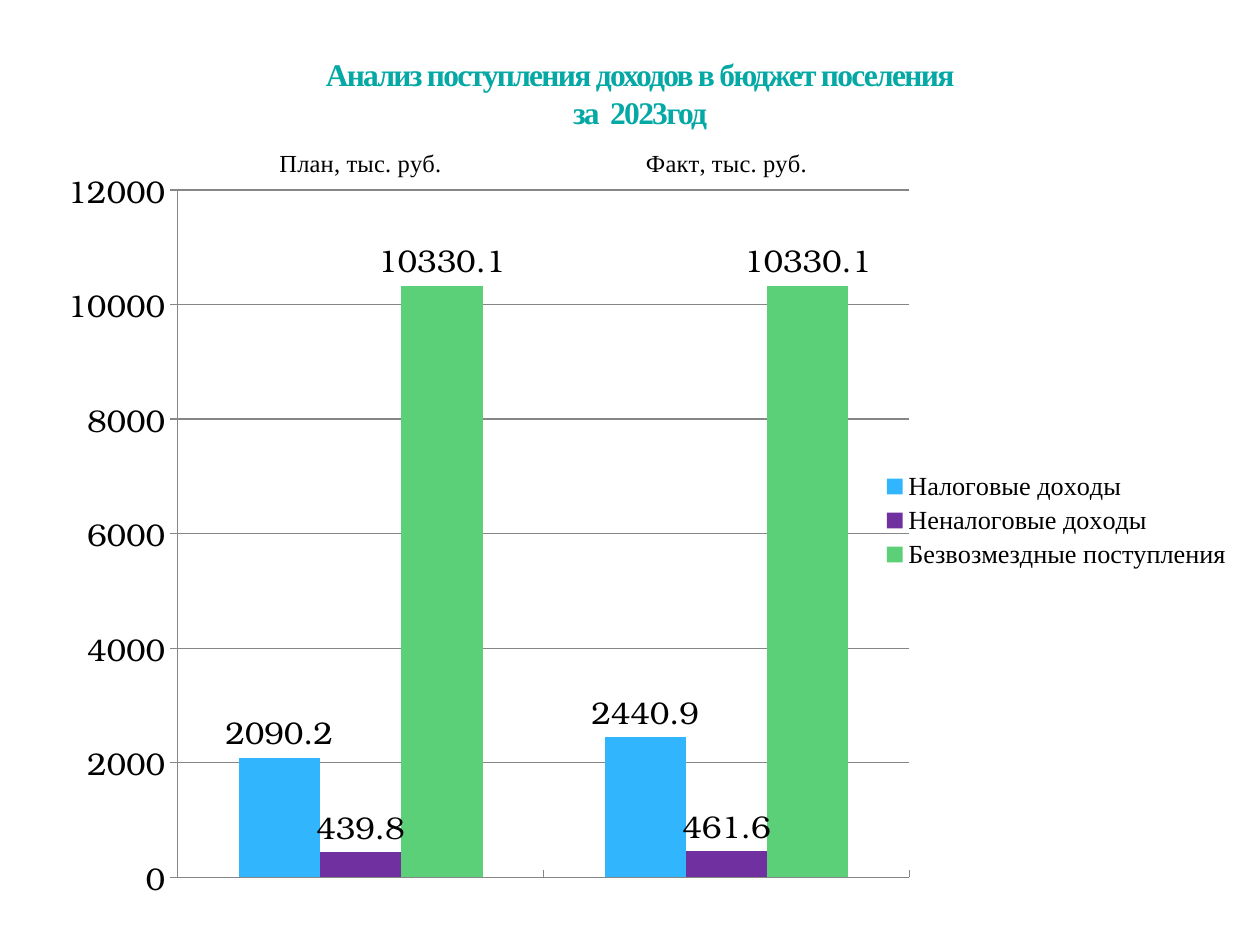
from lxml import etree
from pptx import Presentation
from pptx.chart.data import CategoryChartData
from pptx.dml.color import RGBColor
from pptx.enum.chart import XL_CHART_TYPE as ChartType
from pptx.enum.chart import XL_LABEL_POSITION as LabelPosition
from pptx.enum.chart import XL_LEGEND_POSITION as LegendPosition
from pptx.enum.chart import XL_TICK_LABEL_POSITION as TickLabels
from pptx.enum.chart import XL_TICK_MARK as TickMark
from pptx.enum.text import MSO_ANCHOR as Anchor
from pptx.enum.text import MSO_AUTO_SIZE as AutoSize
from pptx.enum.text import PP_ALIGN as Align
from pptx.oxml.ns import qn
from pptx.util import Inches, Pt


def color(value):
    return RGBColor.from_string(value)


class IncomePage:
    """Hold the style and the current slide of the income report."""

    text_font = "Times New Roman"
    number_font = "TeX Gyre Bonum"
    black = "000000"
    grid = "868686"
    teal = "04A8A4"

    def __init__(self, deck):
        self.page = deck.slides.add_slide(deck.slide_layouts[5])

    def format_font(self, font, name, size, shade=black):
        font.name = name
        font.size = Pt(size)
        font.color.rgb = color(shade)

    def add_title(self, text, area):
        box = self.page.shapes.title
        box.left, box.top, box.width, box.height = map(Inches, area)
        frame = box.text_frame
        frame.text = text
        frame.auto_size = AutoSize.NONE
        frame.vertical_anchor = Anchor.TOP
        frame.margin_top = 0
        para = frame.paragraphs[0]
        para.alignment = Align.CENTER
        for span in para.runs:
            self.format_font(span.font, self.text_font, 18, self.teal)
            span.font.bold = True
            span._r.get_or_add_rPr().set("spc", "-100")

    def add_columns(self, categories, series, area, plot_area):
        data = CategoryChartData()
        data.categories = categories
        for name, values, _ in series:
            data.add_series(name, values)
        chart = self.page.shapes.add_chart(
            ChartType.COLUMN_CLUSTERED, *map(Inches, area), data
        ).chart
        chart.has_title = False
        self.format_font(chart.font, self.number_font, 18)
        self.place_plot(chart, plot_area)
        self.format_axes(chart)
        chart.has_legend = True
        chart.legend.position = LegendPosition.RIGHT
        chart.legend.include_in_layout = False
        self.format_font(chart.legend.font, self.text_font, 15)

        plot = chart.plots[0]
        plot.gap_width = 150
        plot.overlap = 0
        plot.vary_by_categories = False
        for column, (_, _, shade) in zip(plot.series, series):
            column.format.fill.solid()
            column.format.fill.fore_color.rgb = color(shade)
            column.invert_if_negative = False
            labels = column.data_labels
            labels.show_value = True
            labels.position = LabelPosition.OUTSIDE_END
            self.format_font(labels.font, self.number_font, 18)

    def format_axes(self, chart):
        category, value = chart.category_axis, chart.value_axis
        category.tick_label_position = TickLabels.HIGH
        category.major_tick_mark = TickMark.INSIDE
        self.format_font(category.tick_labels.font, self.text_font, 14)
        value.minimum_scale, value.maximum_scale = 0, 12000
        value.major_unit = 2000
        value.major_tick_mark = TickMark.OUTSIDE
        value.has_major_gridlines = True
        self.format_font(value.tick_labels.font, self.number_font, 18)
        for item in (category, value, value.major_gridlines):
            item.format.line.color.rgb = color(self.grid)
            item.format.line.width = Pt(0.75)

    def place_plot(self, chart, plot_area):
        area = chart._chartSpace.find(".//" + qn("c:plotArea"))
        for old in area.findall(qn("c:layout")):
            area.remove(old)
        layout = etree.Element(qn("c:layout"))
        area.insert(0, layout)
        manual = etree.SubElement(layout, qn("c:manualLayout"))
        settings = [("layoutTarget", "inner"), ("xMode", "edge"), ("yMode", "edge")]
        settings += zip("xywh", map(str, plot_area))
        for name, setting in settings:
            etree.SubElement(manual, qn("c:" + name)).set("val", setting)


def main():
    deck = Presentation()
    deck.slide_width, deck.slide_height = Inches(10), Inches(7.5)
    report = IncomePage(deck)
    report.add_title(
        "Анализ поступления доходов в бюджет поселения\vза  2023год",
        (1.14, 0.44, 7.88, 0.87),
    )
    report.add_columns(
        ["План, тыс. руб.", "Факт, тыс. руб."],
        [
            ("Налоговые доходы", (2090.2, 2440.9), "31B6FD"),
            ("Неналоговые доходы", (439.8, 461.6), "7030A0"),
            ("Безвозмездные поступления", (10330.1, 10330.1), "5BD078"),
        ],
        (0.51, 1.15, 9.37, 5.98),
        (0.096, 0.06, 0.62, 0.915),
    )
    deck.save("out.pptx")


if __name__ == "__main__":
    main()
